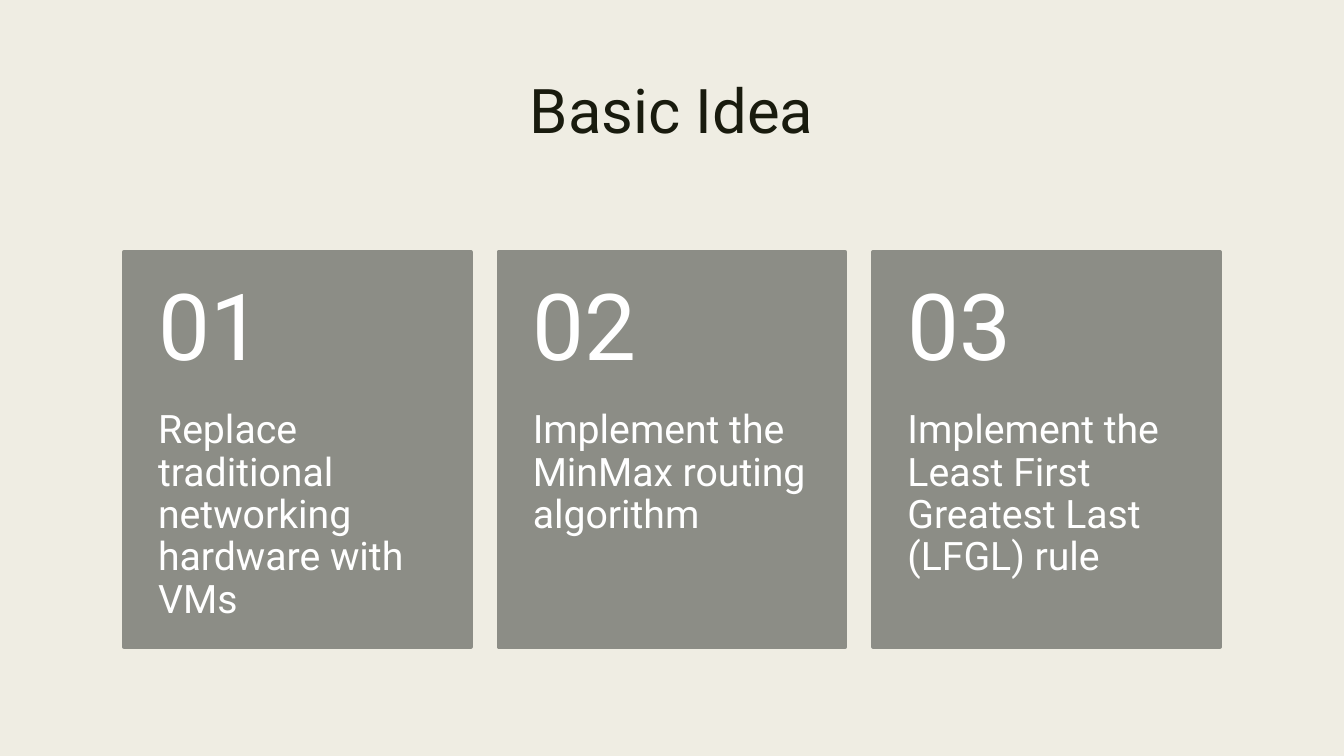
from pptx import Presentation
from pptx.dml.color import RGBColor
from pptx.enum import shapes, text
from pptx.util import Pt

FONT = "Roboto"
CREAM, DARK, GREY, WHITE = "EFEDE3", "191B0E", "8C8D86", "FFFFFF"
IDEAS = [
    "Replace traditional networking hardware with VMs",
    "Implement the MinMax routing algorithm",
    "Implement the Least First Greatest Last (LFGL) rule",
]


def paint(color, code):
    color.rgb = RGBColor.from_string(code)


def write(frame, words, size, code, anchor, pads, space):
    """Fill a text frame; pads are left, top, right, bottom in points."""
    frame.text = words
    frame.word_wrap = True
    frame.auto_size = text.MSO_AUTO_SIZE.NONE
    frame.vertical_anchor = anchor
    sides = [Pt(pad) for pad in pads]
    (frame.margin_left, frame.margin_top,
     frame.margin_right, frame.margin_bottom) = sides
    para = frame.paragraphs[0]
    para.line_spacing = space
    font = para.runs[0].font
    font.name, font.size = FONT, Pt(size)
    paint(font.color, code)
    return para


def add_title(slide, words, left, top, width, height):
    title = slide.shapes.title
    title.left, title.top = Pt(left), Pt(top)
    title.width, title.height = Pt(width), Pt(height)
    para = write(title.text_frame, words, 44, DARK,
                 text.MSO_ANCHOR.TOP, (7.2, 3.6, 7.2, 3.6), 0.89)
    para.alignment = text.PP_ALIGN.CENTER


def add_card(slide, number, words, left, top, width, height):
    group = slide.shapes.add_group_shape().shapes
    head = height * 0.4

    # Card face
    face = group.add_shape(shapes.MSO_SHAPE.RECTANGLE,
                           Pt(left), Pt(top), Pt(width), Pt(height))
    face.shadow.inherit = False
    face.fill.solid()
    paint(face.fill.fore_color, GREY)
    paint(face.line.color, GREY)
    face.line.width = Pt(2.75)

    # Idea below, number above
    body = group.add_textbox(Pt(left), Pt(top + head),
                             Pt(width), Pt(height - head))
    write(body.text_frame, words, 28, WHITE,
          text.MSO_ANCHOR.TOP, (24.5, 0, 24.5, 26), 0.9)
    label = group.add_textbox(Pt(left), Pt(top), Pt(width), Pt(head))
    write(label.text_frame, number, 66, WHITE,
          text.MSO_ANCHOR.MIDDLE, (24.5, 13, 24.5, 13), 0.9)


def add_cards(slide, left, top, width, height, gap):
    count = len(IDEAS)
    card = (width - gap * (count - 1)) / count
    for i, idea in enumerate(IDEAS):
        add_card(slide, f"{i + 1:02}", idea,
                 left + i * (card + gap), top, card, height)


def main():
    deck = Presentation()
    deck.slide_width, deck.slide_height = Pt(960), Pt(540)
    slide = deck.slides.add_slide(deck.slide_layouts[5])

    # Background
    slide.background.fill.solid()
    paint(slide.background.fill.fore_color, CREAM)

    add_title(slide, "Basic Idea", 50.4, 54, 859, 116.6)
    add_cards(slide, 88.5, 180, 783, 282, 19.8)
    deck.save("out.pptx")


if __name__ == "__main__":
    main()
